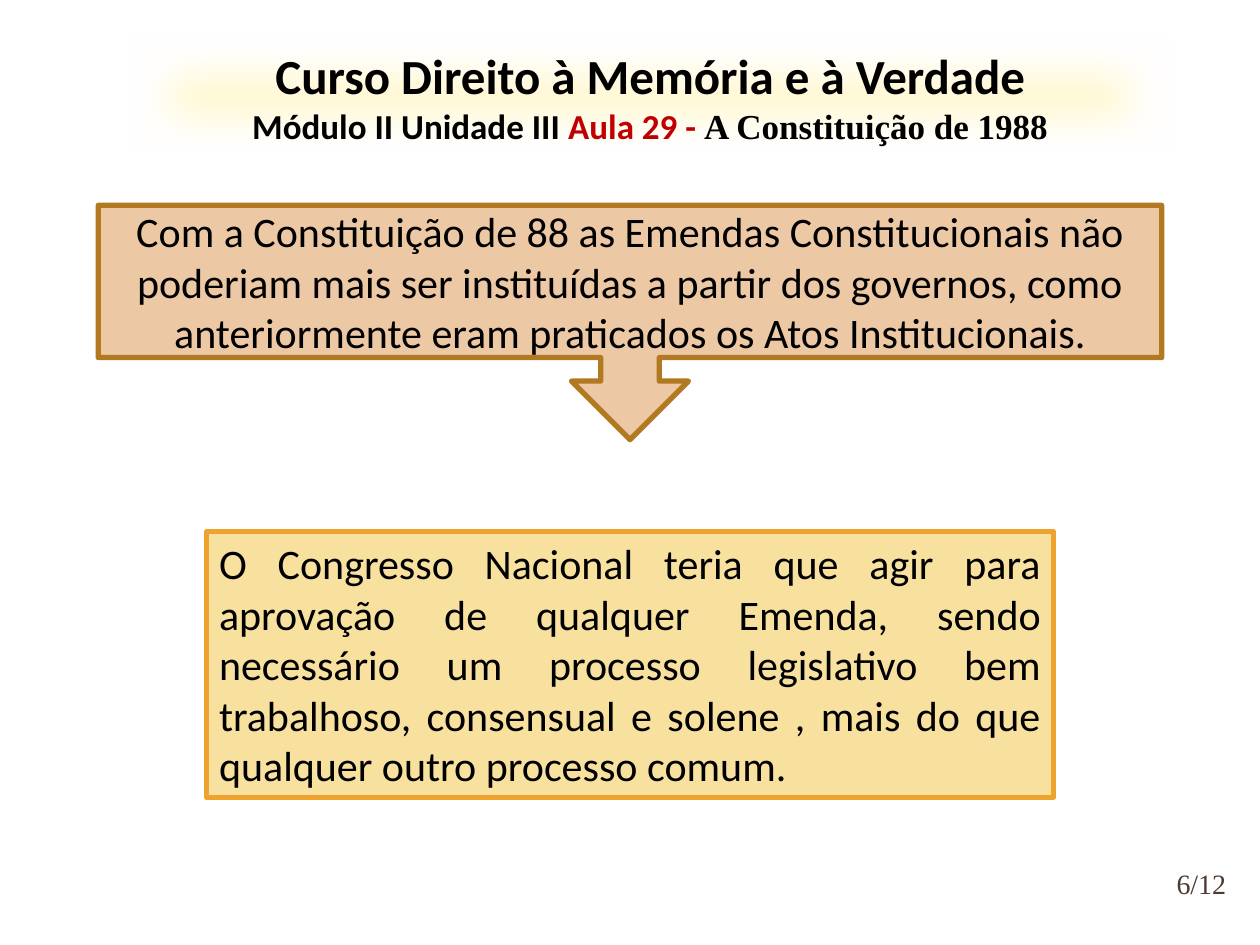
import pptx
import pptx.util
import pptx.dml.color
import pptx.enum.shapes
import pptx.enum.text
import pptx.oxml
import pptx.oxml.ns

Inches = pptx.util.Inches
Shape = pptx.enum.shapes.MSO_SHAPE
Align = pptx.enum.text.PP_ALIGN
Anchor = pptx.enum.text.MSO_ANCHOR

COLORS = {
    "black": "000000", "red": "C00000", "brown": "4E3B30", "glow": "FFF5BA",
    "peach": "ECC8A4", "bronze": "B27822", "sand": "F8E19F", "orange": "F0A22E",
}
SANS, SERIF = "Calibri", "Times New Roman"

# Content: paragraphs of runs (text, size, font, colour, bold)
TITLE = [
    [("Curso Direito à Memória e à Verdade", 28, SANS, "black", True)],
    [("Módulo II Unidade III ", 20, SANS, "black", True),
     ("Aula 29 - ", 20, SANS, "red", True),
     ("A Constituição de 1988", 20, SERIF, "black", True)],
]
AMENDMENTS = (
    "Com a Constituição de 88 as Emendas Constitucionais não poderiam mais ser "
    "instituídas a partir dos governos, como anteriormente eram praticados os "
    "Atos Institucionais."
)
CONGRESS = (
    "O Congresso Nacional teria que agir para aprovação de qualquer Emenda, "
    "sendo necessário um processo legislativo bem trabalhoso, consensual e "
    "solene , mais do que qualquer outro processo comum."
)
# Boxes: preset, (left, top, width, height), fill, line, alignment, anchor, text
BOXES = [
    (Shape.RECTANGLE, (1.64, 4.22, 6.72, 2.11), "sand", "orange",
     Align.JUSTIFY, Anchor.TOP, CONGRESS),
    (Shape.DOWN_ARROW_CALLOUT, (0.78, 1.63, 8.44, 1.86), "peach", "bronze",
     Align.CENTER, Anchor.MIDDLE, AMENDMENTS),
]
PAGE_NUMBER = "6/12"


def rgb(name):
    return pptx.dml.color.RGBColor.from_string(COLORS[name])


def write(shape, paragraphs, align, anchor):
    frame = shape.text_frame
    frame.word_wrap = True
    frame.auto_size = pptx.enum.text.MSO_AUTO_SIZE.NONE
    frame.vertical_anchor = anchor
    for index, runs in enumerate(paragraphs):
        para = frame.add_paragraph() if index else frame.paragraphs[0]
        para.alignment = align
        for text, size, font, color, bold in runs:
            span = para.add_run()
            span.text = text
            span.font.size = pptx.util.Pt(size)
            span.font.name = font
            span.font.bold = bold
            span.font.color.rgb = rgb(color)


def paint(shape, fill):
    shape.fill.solid()
    shape.fill.fore_color.rgb = rgb(fill)


deck = pptx.Presentation()
deck.slide_width, deck.slide_height = Inches(10), Inches(7.5)
page = deck.slides.add_slide(deck.slide_layouts[5])

# Title over a soft-edged yellow band
title = page.shapes.title
title.left, title.top, title.width, title.height = map(Inches, (1.02, 0.31, 8.28, 0.91))
paint(title, "glow")
title._element.spPr.append(pptx.oxml.parse_xml(
    f'<a:effectLst {pptx.oxml.ns.nsdecls("a")}><a:softEdge rad="317500"/></a:effectLst>'))
write(title, TITLE, Align.CENTER, Anchor.TOP)

# Page number
number = page.shapes.add_textbox(*map(Inches, (9.2, 6.76, 0.67, 0.5)))
write(number, [[(PAGE_NUMBER, 16, SERIF, "brown", False)]], Align.CENTER, Anchor.MIDDLE)
frame = number.text_frame
frame.margin_left = frame.margin_right = frame.margin_top = frame.margin_bottom = 0

# Callout and conclusion
for preset, place, fill, line, align, anchor, text in BOXES:
    box = page.shapes.add_shape(preset, *map(Inches, place))
    box.shadow.inherit = False
    paint(box, fill)
    box.line.color.rgb = rgb(line)
    box.line.width = pptx.util.Pt(3)
    write(box, [[(text, 24, SANS, "black", False)]], align, anchor)

deck.save("out.pptx")
